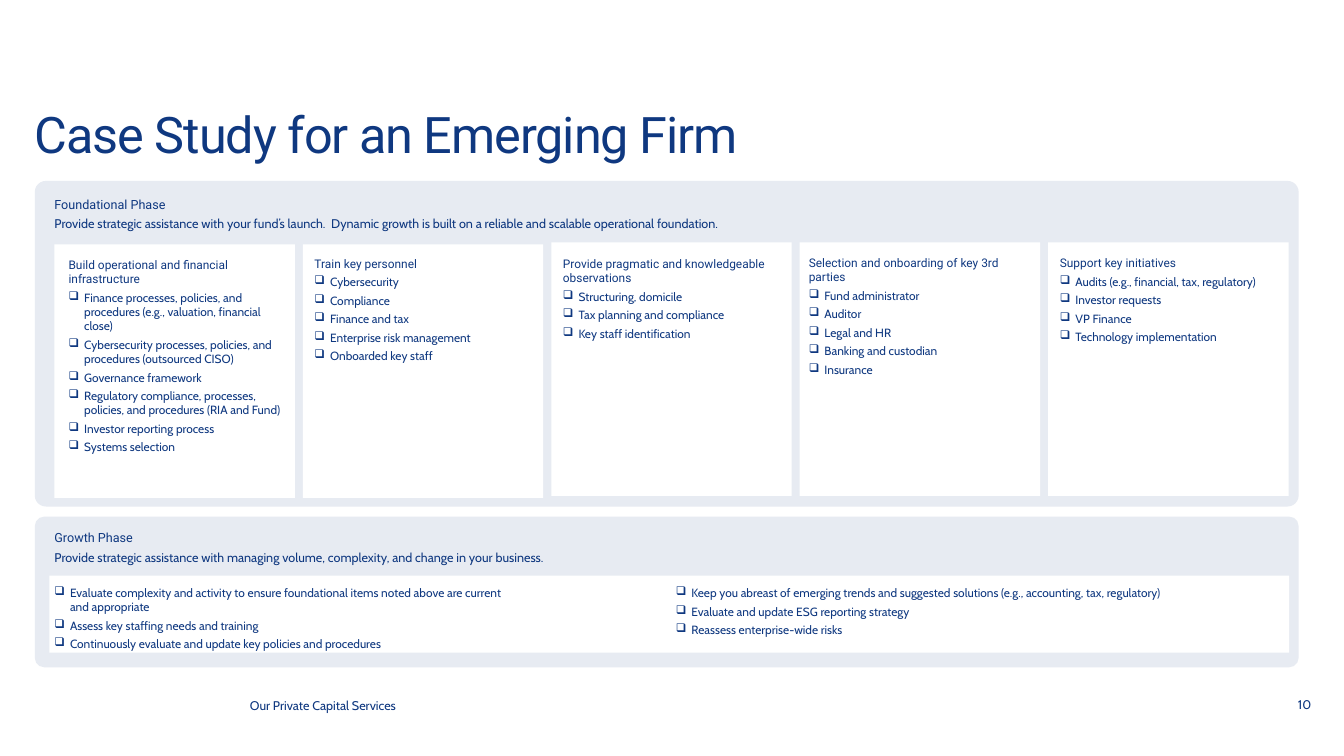
"""Build the slide showing the foundational and growth phases of an emerging firm."""
import pptx
import pptx.dml.color
import pptx.enum.shapes
import pptx.enum.text
import pptx.oxml.ns
import pptx.util
import lxml.etree

PX = 9144
COLORS = {"navy": "0F3880", "panel": "E7EBF2", "card": "FFFFFF"}
HEADING_FONT, BODY_FONT = "Roboto", "Cabin"
BULLET_INDENT = 31

CARDS = [
    (485, 136, 511, "Build operational and financial infrastructure", [
        "Finance processes, policies, and procedures (e.g., valuation, financial close)",
        "Cybersecurity processes, policies, and procedures (outsourced CISO)",
        "Governance framework",
        "Regulatory compliance, processes, policies, and procedures (RIA and Fund)",
        "Investor reporting process",
        "Systems selection"]),
    (485, 624, 509, "Train key personnel", [
        "Cybersecurity", "Compliance", "Finance and tax",
        "Enterprise risk management", "Onboarded key staff"]),
    (481, 1117, 509, "Provide pragmatic and knowledgeable observations", [
        "Structuring, domicile", "Tax planning and compliance",
        "Key staff identification"]),
    (481, 1605, 507, "Selection and onboarding of key 3rd parties", [
        "Fund administrator", "Auditor", "Legal and HR",
        "Banking and custodian", "Insurance"]),
    (481, 2103, 508, "Support key initiatives", [
        "Audits (e.g., financial, tax, regulatory)", "Investor requests",
        "VP Finance", "Technology implementation"]),
]
PHASES = [
    (391, "Foundational Phase",
     "Provide strategic assistance with your fund’s launch.  Dynamic growth is built "
     "on a reliable and scalable operational foundation."),
    (1052, "Growth Phase",
     "Provide strategic assistance with managing volume, complexity, and change in "
     "your business."),
]
GROWTH_ITEMS = [
    "Evaluate complexity and activity to ensure foundational items noted above are current"
    "\nand appropriate",
    "Assess key staffing needs and training",
    "Continuously evaluate and update key policies and procedures",
    "Keep you abreast of emerging trends and suggested solutions (e.g., accounting, tax, regulatory)",
    "Evaluate and update ESG reporting strategy",
    "Reassess enterprise-wide risks",
]


def add_block(left, top, width, height, color, radius):
    kind = pptx.enum.shapes.MSO_SHAPE.ROUNDED_RECTANGLE
    shape = slide.shapes.add_shape(kind, left * PX, top * PX, width * PX, height * PX)
    shape.adjustments[0] = radius
    shape.shadow.inherit = False
    shape.fill.solid()
    shape.fill.fore_color.rgb = pptx.dml.color.RGBColor.from_string(COLORS[color])
    shape.line.fill.background()


def write_text(left, top, width, height, size, lines, shape=None):
    box = [value * PX for value in (left, top, width, height)]
    if shape is None:
        shape = slide.shapes.add_textbox(*box)
    else:
        shape.left, shape.top, shape.width, shape.height = box
        slide.shapes.element.append(shape.element)
    frame = shape.text_frame
    frame.word_wrap = True
    frame.auto_size = pptx.enum.text.MSO_AUTO_SIZE.NONE
    frame.vertical_anchor = pptx.enum.text.MSO_ANCHOR.TOP
    frame.margin_left = frame.margin_top = frame.margin_right = frame.margin_bottom = 0
    for number, (text, font, bulleted) in enumerate(lines):
        paragraph = frame.add_paragraph() if number else frame.paragraphs[0]
        paragraph.alignment = pptx.enum.text.PP_ALIGN.LEFT
        paragraph.space_before = pptx.util.Pt(6 if number else 0)
        indent = BULLET_INDENT * PX if bulleted else 0
        properties = paragraph._p.get_or_add_pPr()
        properties.set("marL", str(indent))
        properties.set("indent", str(-indent))
        tag = "a:buChar" if bulleted else "a:buNone"
        bullet = lxml.etree.SubElement(properties, pptx.oxml.ns.qn(tag))
        if bulleted:
            bullet.set("char", "❑")
        for part_number, part in enumerate(text.split("\n")):
            if part_number:
                paragraph.add_line_break()
            run = paragraph.add_run()
            run.text = part
            run.font.name = font
            run.font.size = pptx.util.Pt(size)
            run.font.color.rgb = pptx.dml.color.RGBColor.from_string(COLORS["navy"])
    return frame


presentation = pptx.Presentation()
presentation.slide_width = 2667 * PX
presentation.slide_height = 1500 * PX
slide = presentation.slides.add_slide(presentation.slide_layouts[3])
title, *phase_bodies = list(slide.placeholders)

add_block(69, 359, 2508, 646, "panel", 0.034)
add_block(69, 1025, 2508, 299, "panel", 0.063)

title_frame = write_text(
    69, 208, 2073, 148, 72, [("Case Study for an Emerging Firm", HEADING_FONT, False)], title)
title_paragraph = title_frame.paragraphs[0]
title_paragraph.line_spacing = pptx.util.Pt(84)
title_paragraph.runs[0].font._element.set("spc", "-150")

for body, (top, heading, summary) in zip(phase_bodies, PHASES):
    lines = [(heading, HEADING_FONT, False), (summary, BODY_FONT, False)]
    write_text(108, top, 2450, 92, 18, lines, body)

for column, (card_top, text_left, text_top, heading, items) in enumerate(CARDS):
    add_block(108 + 493 * column, card_top, 477, 503, "card", 0)
    lines = [(heading, HEADING_FONT, False)] + [(item, BODY_FONT, True) for item in items]
    write_text(text_left, text_top, 428, 446, 17, lines)

add_block(98, 1142, 2460, 153, "card", 0)
growth_frame = write_text(
    108, 1162, 2427, 110, 17, [(item, BODY_FONT, True) for item in GROWTH_ITEMS])
growth_frame.auto_size = pptx.enum.text.MSO_AUTO_SIZE.SHAPE_TO_FIT_TEXT
growth_columns = growth_frame._txBody.bodyPr
growth_columns.set("numCol", "2")
growth_columns.set("spcCol", str(39 * PX))

write_text(496, 1384, 837, 37, 18, [("Our Private Capital Services", BODY_FONT, False)])
number_frame = write_text(2535, 1382, 108, 37, 18, [("10", BODY_FONT, False)])
number_frame.paragraphs[0].alignment = pptx.enum.text.PP_ALIGN.CENTER

presentation.save("out.pptx")
